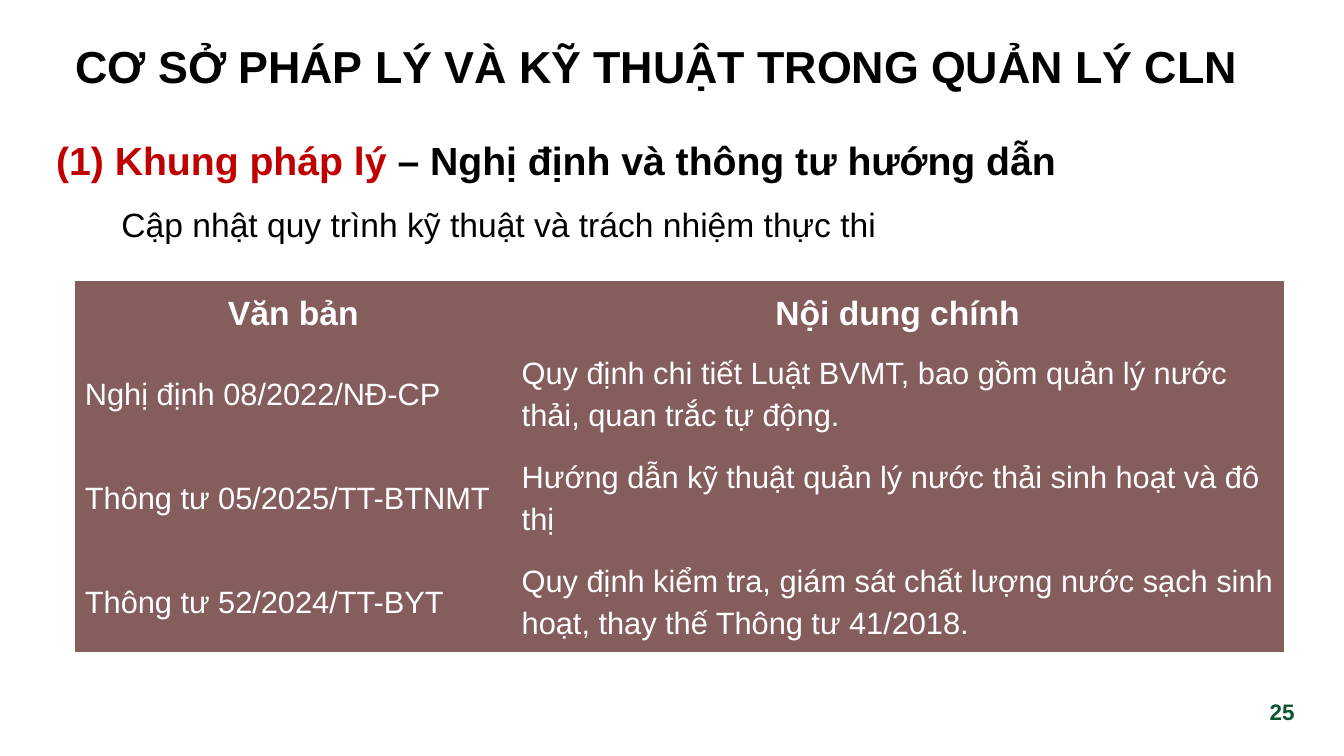
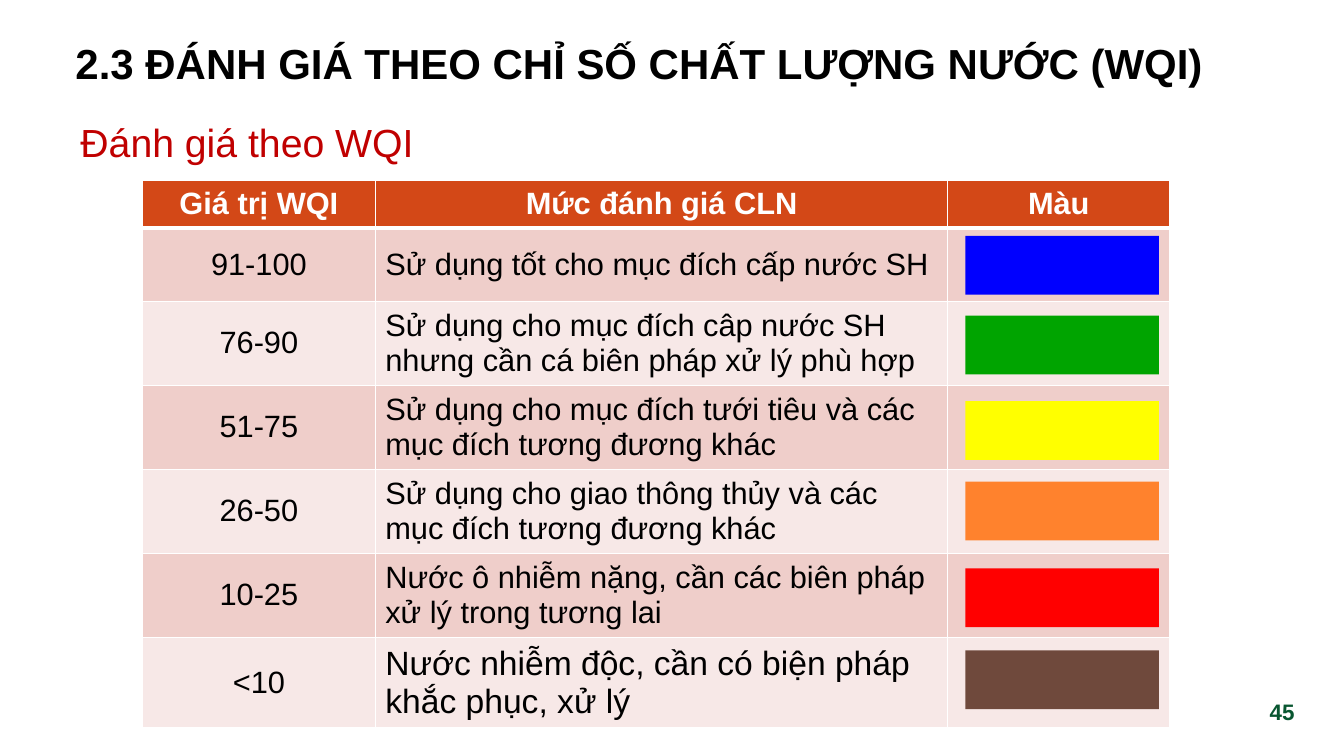
from pptx import Presentation
from pptx.dml.color import RGBColor
from pptx.enum.shapes import MSO_SHAPE
from pptx.enum.text import MSO_ANCHOR, PP_ALIGN
from pptx.oxml.ns import qn
from pptx.util import Pt
from lxml import etree

FONT = "Arial"
BLACK, WHITE, RED, GREEN = "000000", "FFFFFF", "C00000", "085630"
MAROON, ORANGE, BANDS = "855D5D", "D34817", ("EFCECA", "F7E8E7")
PLAIN_GRID = "{2D5ABB26-0587-4C30-8999-92F81FD0307C}"
LEFT, CENTER = PP_ALIGN.LEFT, PP_ALIGN.CENTER

LEGAL_TITLE = "cơ sở pháp lý và kỹ thuật trong quản lý cln"
LEGAL_HEADING = [("(1) Khung pháp lý ", RED), ("– Nghị định và thông tư hướng dẫn", BLACK)]
LEGAL_SUBHEADING = "Cập nhật quy trình kỹ thuật và trách nhiệm thực thi"
LEGAL_ROWS = [
    ("Văn bản", "Nội dung chính"),
    ("Nghị định 08/2022/NĐ-CP",
     "Quy định chi tiết Luật BVMT, bao gồm quản lý nước thải, quan trắc tự động."),
    ("Thông tư 05/2025/TT-BTNMT",
     "Hướng dẫn kỹ thuật quản lý nước thải sinh hoạt và đô thị"),
    ("Thông tư 52/2024/TT-BYT",
     "Quy định kiểm tra, giám sát chất lượng nước sạch sinh hoạt, thay thế Thông tư 41/2018."),
]

WQI_TITLE = "2.3 ĐÁNH GIÁ THEO CHỈ SỐ CHẤT LƯỢNG NƯỚC (WQI)"
WQI_HEADING = "Đánh giá theo WQI"
WQI_HEADER = ("Giá trị WQI", "Mức đánh giá CLN", "Màu")
WQI_LEVELS = [
    ("91-100", "Sử dụng tốt cho mục đích cấp nước SH", 22, "0000FF", 168.5),
    ("76-90", "Sử dụng cho mục đích câp nước SH nhưng cần cá biên pháp xử lý phù hợp",
     22, "00A400", 225.5),
    ("51-75", "Sử dụng cho mục đích tưới tiêu và các mục đích tương đương khác",
     22, "FFFF00", 286.5),
    ("26-50", "Sử dụng cho giao thông thủy và các mục đích tương đương khác",
     22, "FF822D", 344),
    ("10-25", "Nước ô nhiễm nặng, cần các biên pháp xử lý trong tương lai",
     22, "FF0000", 406),
    ("<10", "Nước nhiễm độc, cần có biện pháp khắc phục, xử lý", 24, "6F493C", 464.5),
]


def rgb(value):
    return RGBColor.from_string(value)


def add_run(paragraph, text, size, color=BLACK, bold=False):
    run = paragraph.add_run()
    run.text = text
    run.font.name = FONT
    run.font.size = Pt(size)
    run.font.bold = bold
    run.font.color.rgb = rgb(color)
    return run


def add_frame(slide, left, top, width, height, anchor=MSO_ANCHOR.TOP):
    box = slide.shapes.add_textbox(Pt(left), Pt(top), Pt(width), Pt(height))
    frame = box.text_frame
    frame.word_wrap = True
    frame.vertical_anchor = anchor
    return frame


def add_base(prs, title, size, number, small_caps=False):
    slide = prs.slides.add_slide(prs.slide_layouts[6])
    heading = add_frame(slide, 46.8, 10, 904, 73.5, MSO_ANCHOR.MIDDLE).paragraphs[0]
    heading.line_spacing = 0.9
    run = add_run(heading, title, size, bold=True)
    if small_caps:
        run.font._element.set("cap", "small")
    footer = add_frame(slide, 890.5, 494, 50.5, 28.8, MSO_ANCHOR.MIDDLE).paragraphs[0]
    footer.alignment = CENTER
    add_run(footer, str(number), 16, GREEN, True)
    return slide


def add_grid(slide, left, top, widths, heights):
    table = slide.shapes.add_table(len(heights), len(widths), Pt(left), Pt(top),
                                   Pt(sum(widths)), Pt(sum(heights))).table
    table._tbl.tblPr.find(qn("a:tableStyleId")).text = PLAIN_GRID
    for column, width in zip(table.columns, widths):
        column.width = Pt(width)
    for row, height in zip(table.rows, heights):
        row.height = Pt(height)
    return table


def fill_cell(cell, fill, text="", size=22, color=BLACK, bold=False, align=LEFT, spacing=1.0):
    cell.fill.solid()
    cell.fill.fore_color.rgb = rgb(fill)
    cell.vertical_anchor = MSO_ANCHOR.MIDDLE
    cell.margin_left = cell.margin_right = Pt(7.2)
    cell.margin_top = cell.margin_bottom = Pt(3.6)
    if text:
        paragraph = cell.text_frame.paragraphs[0]
        paragraph.alignment = align
        paragraph.line_spacing = spacing
        add_run(paragraph, text, size, color, bold)


def set_borders(cell, top=1, bottom=1):
    props = cell._tc.get_or_add_tcPr()
    sides = (("a:lnL", 1), ("a:lnR", 1), ("a:lnT", top), ("a:lnB", bottom))
    for position, (side, width) in enumerate(sides):
        line = etree.Element(qn(side), w=str(int(Pt(width))))
        solid = etree.SubElement(line, qn("a:solidFill"))
        etree.SubElement(solid, qn("a:srgbClr"), val=WHITE)
        props.insert(position, line)


def build_legal(prs):
    slide = add_base(prs, LEGAL_TITLE, 40, 25, small_caps=True)
    body = add_frame(slide, 33, 83.5, 904, 110)
    heading = body.paragraphs[0]
    heading.line_spacing = 1.3
    for text, color in LEGAL_HEADING:
        add_run(heading, text, 28, color, True)
    subheading = body.add_paragraph()
    subheading.line_spacing = 1.3
    subheading.space_before = Pt(6)
    subheading._p.get_or_add_pPr().set("marL", str(int(Pt(46.7))))
    add_run(subheading, LEGAL_SUBHEADING, 24)

    table = add_grid(slide, 53.5, 200.7, (312, 551.5), [39.7] + [74.3] * 3)
    for r, texts in enumerate(LEGAL_ROWS):
        header = r == 0
        for c, text in enumerate(texts):
            fill_cell(table.cell(r, c), MAROON, text, 24 if header else 22, WHITE,
                      header, CENTER if header else LEFT, 1.2)


def build_wqi(prs):
    slide = add_base(prs, WQI_TITLE, 30, 45)
    heading = add_frame(slide, 50.4, 74.2, 904, 50).paragraphs[0]
    heading.line_spacing = 1.2
    add_run(heading, WQI_HEADING, 28, RED)

    table = add_grid(slide, 101.8, 129, (166.3, 409, 158.4), [33.5, 52.5] + [59.8] * 5)
    for c, text in enumerate(WQI_HEADER):
        fill_cell(table.cell(0, c), ORANGE, text, 22, WHITE, True, CENTER)
        set_borders(table.cell(0, c), bottom=3)
    for r, (score, meaning, size, color, swatch_top) in enumerate(WQI_LEVELS, 1):
        band = BANDS[(r - 1) % 2]
        fill_cell(table.cell(r, 0), band, score, align=CENTER)
        fill_cell(table.cell(r, 1), band, meaning, size)
        fill_cell(table.cell(r, 2), band)
        for c in range(3):
            set_borders(table.cell(r, c), top=3 if r == 1 else 1)
        swatch = slide.shapes.add_shape(MSO_SHAPE.RECTANGLE, Pt(689.6), Pt(swatch_top),
                                        Pt(138.2), Pt(42))
        swatch.shadow.inherit = False
        swatch.fill.solid()
        swatch.fill.fore_color.rgb = rgb(color)
        swatch.line.fill.background()


def main():
    prs = Presentation()
    prs.slide_width, prs.slide_height = Pt(960), Pt(540)
    build_legal(prs)
    build_wqi(prs)
    prs.save("out.pptx")


if __name__ == "__main__":
    main()
